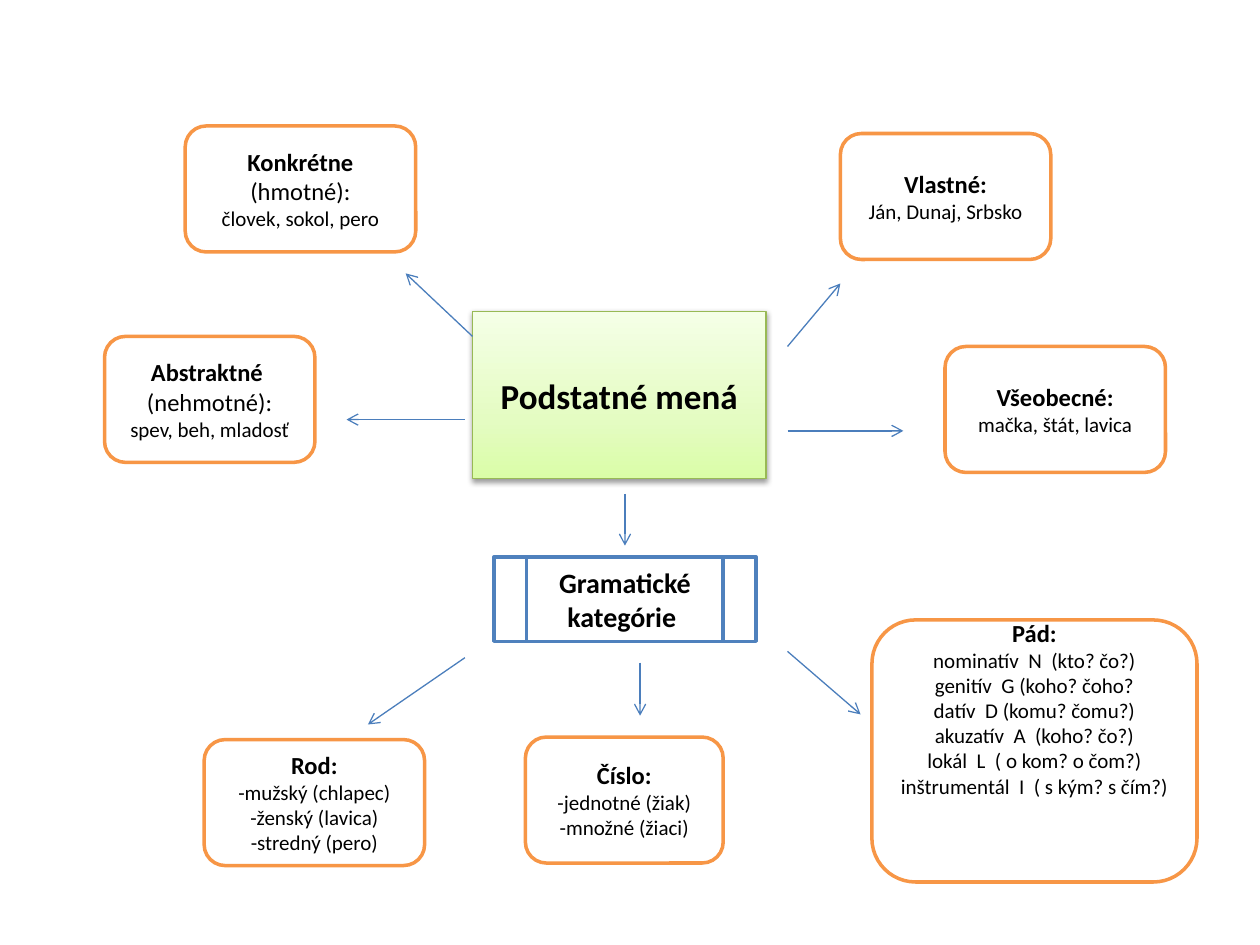
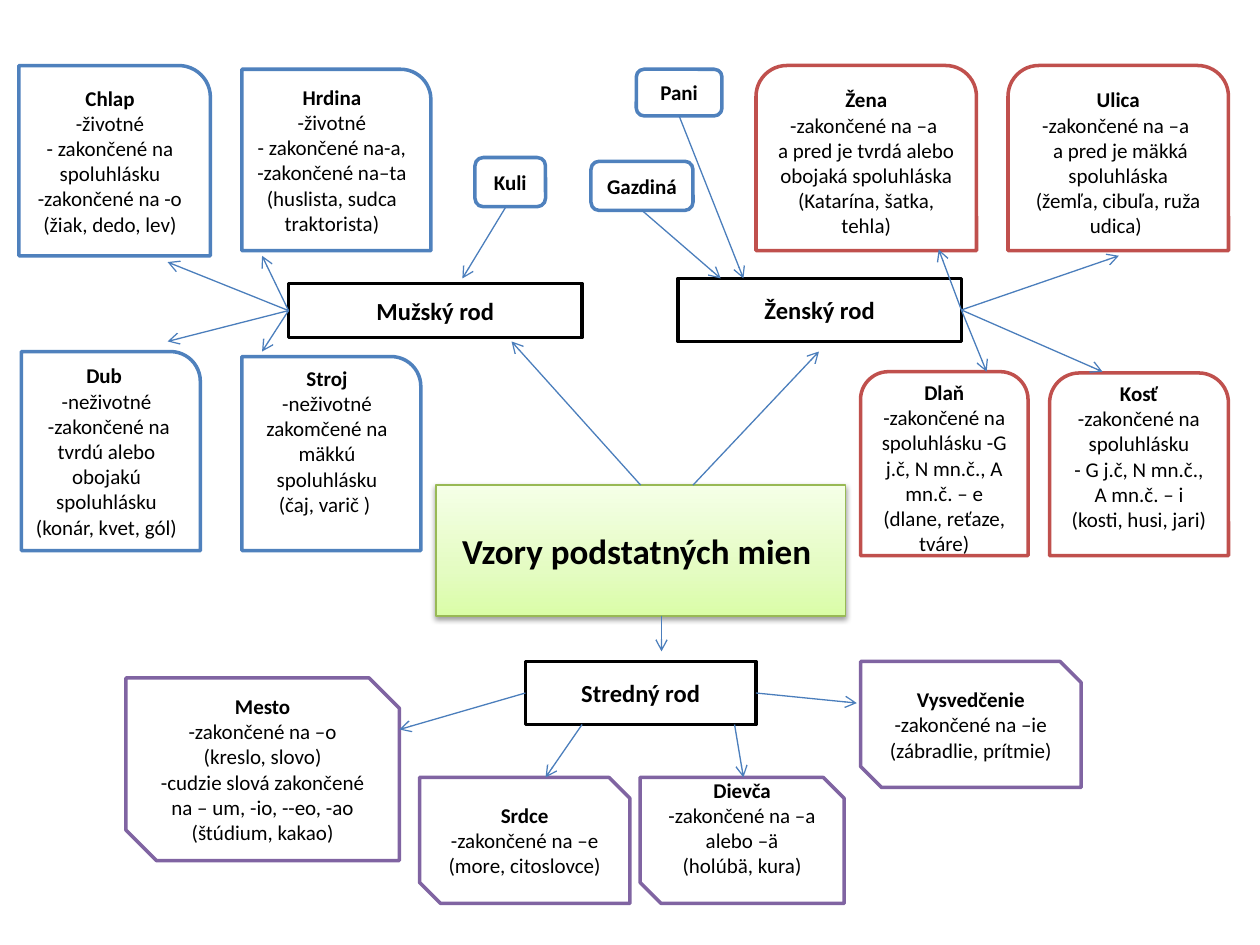
"""Build two mind maps about Slovak nouns: their kinds and their model patterns."""
from lxml.etree import SubElement
from pptx import Presentation
from pptx.dml.color import RGBColor
from pptx.enum.shapes import MSO_CONNECTOR, MSO_SHAPE
from pptx.enum.text import MSO_ANCHOR, MSO_AUTO_SIZE, PP_ALIGN
from pptx.oxml.ns import qn
from pptx.util import Inches, Pt

COLS, ROWS = 10, 7.5
TOP, LEFT, BASE, RIGHT = range(4)
FONT = "Calibri"
INK, PAPER, ARROW, EDGE = "000000", "FFFFFF", "4B7EBC", "98B955"
GREEN = [(0, "DAFDA7"), (35, "E4FCC2"), (100, "F5FFE7")]
PAD = 0.05

STYLES = {
    "group": (MSO_SHAPE.FLOWCHART_PREDEFINED_PROCESS, "4F81BD", 16, 16),
    "kind": (MSO_SHAPE.ROUNDED_RECTANGLE, "F79646", 14, 12),
    "gender": (MSO_SHAPE.RECTANGLE, INK, 14, 14),
    "male": (MSO_SHAPE.ROUND_1_RECTANGLE, "4F81BD", 12, 12),
    "female": (MSO_SHAPE.ROUND_2_SAME_RECTANGLE, "C0504D", 12, 12),
    "neuter": (MSO_SHAPE.SNIP_2_DIAG_RECTANGLE, "8064A2", 12, 12),
    "extra": (MSO_SHAPE.ROUNDED_RECTANGLE, "4F81BD", 12, 12),
}
LIFT = {"Pád:": 0.68, "Stroj": 0.2, "Kosť": 0.2, "Dievča": 0.2}
LARGE = ("(hmotné):", "(nehmotné):")

SLIDES = [
    {
        "title": ("Podstatné mená", "verticalScroll", (3.75, 2.47, 2.33, 1.33)),
        "boxes": [
            ("group", (3.92, 4.42, 2.08, 0.67), ["Gramatické kategórie "]),
            ("kind", (1.47, 1, 1.83, 1),
             ["Konkrétne", "(hmotné):", "človek, sokol, pero"]),
            ("kind", (0.83, 2.67, 1.67, 1),
             ["Abstraktné ", "(nehmotné):", "spev, beh, mladosť"]),
            ("kind", (6.67, 1.06, 1.67, 1), ["Vlastné:", "Ján, Dunaj, Srbsko"]),
            ("kind", (7.5, 2.75, 1.75, 1), ["Všeobecné:", "mačka, štát, lavica"]),
            ("kind", (1.62, 5.87, 1.75, 1),
             ["Rod:", "-mužský (chlapec)", "-ženský (lavica)", "-stredný (pero)"]),
            ("kind", (4.17, 5.85, 1.57, 1),
             ["Číslo:", "-jednotné (žiak)", "-množné (žiaci)"]),
            ("kind", (6.92, 4.92, 2.58, 2.08),
             ["Pád:", "nominatív  N  (kto? čo?)", "genitív  G (koho? čoho?",
              "datív  D (komu? čomu?)", "akuzatív  A  (koho? čo?)",
              "lokál  L  ( o kom? o čom?)", "inštrumentál  I  ( s kým? s čím?)"]),
        ],
        "arrows": [
            ((4.96, 3.92), [(4.96, 4.33)]),
            ((6.25, 2.75), [(6.67, 2.25)]),
            ((6.25, 3.42), [(7.17, 3.42)]),
            ((6.25, 5.17), [(6.83, 5.67)]),
            ((5.08, 5.26), [(5.08, 5.68)]),
            ((3.69, 5.22), [(2.92, 5.75)]),
            ((3.75, 2.67), [(3.22, 2.17)]),
            ((3.69, 3.33), [(2.75, 3.33)]),
        ],
    },
    {
        "title": ("Vzory podstatných mien ", "frame", (3.46, 3.85, 3.25, 1.04)),
        "boxes": [
            ("gender", (2.29, 2.25, 2.33, 0.43), ["Mužský rod"]),
            ("gender", (5.38, 2.21, 2.25, 0.5), ["Ženský rod"]),
            ("gender", (4.17, 5.25, 1.83, 0.5), ["Stredný rod"]),
            ("male", (0.17, 2.79, 1.42, 1.58),
             ["Dub ", "-neživotné", " -zakončené na tvrdú alebo obojakú spoluhlásku",
              "(konár, kvet, gól)"]),
            ("male", (0.15, 0.52, 1.52, 1.51),
             ["Chlap", "-životné", "- zakončené na spoluhlásku", "-zakončené na -o",
              "(žiak, dedo, lev)"]),
            ("male", (1.92, 0.55, 1.5, 1.44),
             ["Hrdina", "-životné", "- zakončené na-a,", "-zakončené na–ta",
              "(huslista, sudca traktorista)"]),
            ("male", (1.92, 2.83, 1.42, 1.54),
             ["Stroj", "-neživotné zakomčené na mäkkú spoluhlásku", "(čaj, varič ) "]),
            ("female", (6, 0.52, 1.75, 1.47),
             ["Žena", "-zakončené na –a ", "a pred je tvrdá alebo obojaká spoluhláska",
              "(Katarína, šatka, tehla)"]),
            ("female", (8, 0.52, 1.75, 1.47),
             ["Ulica", "-zakončené na –a ", " a pred je mäkká spoluhláska",
              "(žemľa, cibuľa, ruža udica) "]),
            ("female", (8.33, 2.96, 1.42, 1.45),
             ["Kosť", "-zakončené na spoluhlásku", "- G j.č, N mn.č., A mn.č. – i",
              "(kosti, husi, jari)"]),
            ("female", (6.83, 2.95, 1.33, 1.46),
             ["Dlaň", "-zakončené na spoluhlásku -G j.č, N mn.č., A mn.č. – e",
              "(dlane, reťaze, tváre)"]),
            ("neuter", (1, 5.38, 2.17, 1.45),
             ["Mesto", "-zakončené na –o", "(kreslo, slovo)",
              "-cudzie slová zakončené na – um, -io, --eo, -ao", "(štúdium, kakao)"]),
            ("neuter", (3.33, 6.17, 1.67, 1),
             ["Srdce", "-zakončené na –e", "(more, citoslovce)"]),
            ("neuter", (5.08, 6.17, 1.62, 1),
             ["Dievča", "-zakončené na –a alebo –ä", "(holúbä, kura)"]),
            ("neuter", (6.83, 5.25, 1.75, 1),
             ["Vysvedčenie", "-zakončené na –ie", "(zábradlie, prítmie)"]),
            ("extra", (5.05, 0.55, 0.68, 0.37), ["Pani"]),
            ("extra", (3.77, 1.25, 0.56, 0.39), ["Kuli"]),
            ("extra", (4.69, 1.28, 0.81, 0.39), ["Gazdiná"]),
        ],
        "arrows": [
            ((5.5, 3.85), [(6.5, 2.79)]),
            (("Vzory podstatných mien ", TOP), [(4.06, 2.71)]),
            ((5.25, 4.89), [(5.25, 5.17)]),
            (("Mužský rod", LEFT), [(2.08, 2.79), (1.33, 2.71), (1.33, 2.08), (2.08, 2.03)]),
            (("Stredný rod", RIGHT), [(6.8, 5.58)]),
            ((5.83, 5.75), [(5.9, 6.17)]),
            ((4.62, 5.75), [(4.33, 6.17)]),
            (("Stredný rod", LEFT), [(3.17, 5.79)]),
            (("Ženský rod", RIGHT), [(7.45, 1.98), (8.88, 2.03), (8.75, 2.95), (7.83, 2.95)]),
            (("Pani", BASE), [(5.9, 2.21)]),
            ((4.01, 1.65), [(3.67, 2.21)]),
            (("Gazdiná", BASE), [(5.72, 2.21)]),
        ],
    },
]


def color(code):
    return RGBColor.from_string(code)


def apply(target, values):
    for name, value in values.items():
        setattr(target, name, value)


def add_node(parent, tag, **values):
    return SubElement(parent, qn(tag), {key: str(val) for key, val in values.items()})


def outline(item, code, width):
    item.line.color.rgb = color(code)
    item.line.width = Pt(width)


def write(shape, lines, head, body, lift=0):
    frame = shape.text_frame
    frame.text = "\n".join(lines)
    apply(frame, {"word_wrap": True, "auto_size": MSO_AUTO_SIZE.NONE,
                  "vertical_anchor": MSO_ANCHOR.MIDDLE,
                  "margin_bottom": Inches(PAD + lift)})
    for row, para in enumerate(frame.paragraphs):
        size = head if row == 0 or para.text in LARGE else body
        para.alignment = PP_ALIGN.CENTER
        for run in para.runs:
            apply(run.font, {"name": FONT, "size": Pt(size), "bold": row == 0})
            run.font.color.rgb = color(INK)


def add_title(slide, text, form, place):
    shape = slide.shapes.title
    apply(shape, dict(zip(("left", "top", "width", "height"), map(Inches, place))))
    props = shape._element.spPr
    shell = add_node(props, "a:prstGeom", prst=form)
    add_node(shell, "a:avLst")
    props.insert(1, shell)
    shape.fill.gradient()
    shape.fill.gradient_angle = 90
    stops = props.find(".//" + qn("a:gsLst"))
    stops.clear()
    for share, code in GREEN:
        stop = add_node(stops, "a:gs", pos=share * 1000)
        add_node(stop, "a:srgbClr", val=code)
    outline(shape, EDGE, 0.75)
    shape.shadow.inherit = False
    shade = add_node(props.find(qn("a:effectLst")), "a:outerShdw", blurRad=Pt(3.1),
                     dist=Pt(1.6), dir=5400000, rotWithShape=0)
    tint = add_node(shade, "a:srgbClr", val=INK)
    add_node(tint, "a:alpha", val=38000)
    write(shape, [text], 20, 20)
    return shape


def add_box(slide, style, place, lines):
    form, edge, head, body = STYLES[style]
    shape = slide.shapes.add_shape(form, *map(Inches, place))
    shape.shadow.inherit = False
    shape.fill.solid()
    shape.fill.fore_color.rgb = color(PAPER)
    outline(shape, edge, 2)
    write(shape, lines, head, body, LIFT.get(lines[0], 0))
    return shape


def add_arrow(slide, start, end, parts):
    glued = start[0] in parts
    begin = (0, 0) if glued else start
    link = slide.shapes.add_connector(MSO_CONNECTOR.STRAIGHT, *map(Inches, begin + end))
    if glued:
        link.begin_connect(parts[start[0]], start[1])
    outline(link, ARROW, 0.75)
    add_node(link.line._get_or_add_ln(), "a:tailEnd", type="arrow")
    add_node(link._element.spPr, "a:effectLst")


def main():
    deck = Presentation()
    apply(deck, {"slide_width": Inches(COLS), "slide_height": Inches(ROWS)})
    for page in SLIDES:
        slide = deck.slides.add_slide(deck.slide_layouts[5])
        parts = {page["title"][0]: add_title(slide, *page["title"])}
        for style, place, lines in page["boxes"]:
            parts[lines[0]] = add_box(slide, style, place, lines)
        for start, ends in page["arrows"]:
            for end in ends:
                add_arrow(slide, start, end, parts)
    deck.save("out.pptx")


if __name__ == "__main__":
    main()
